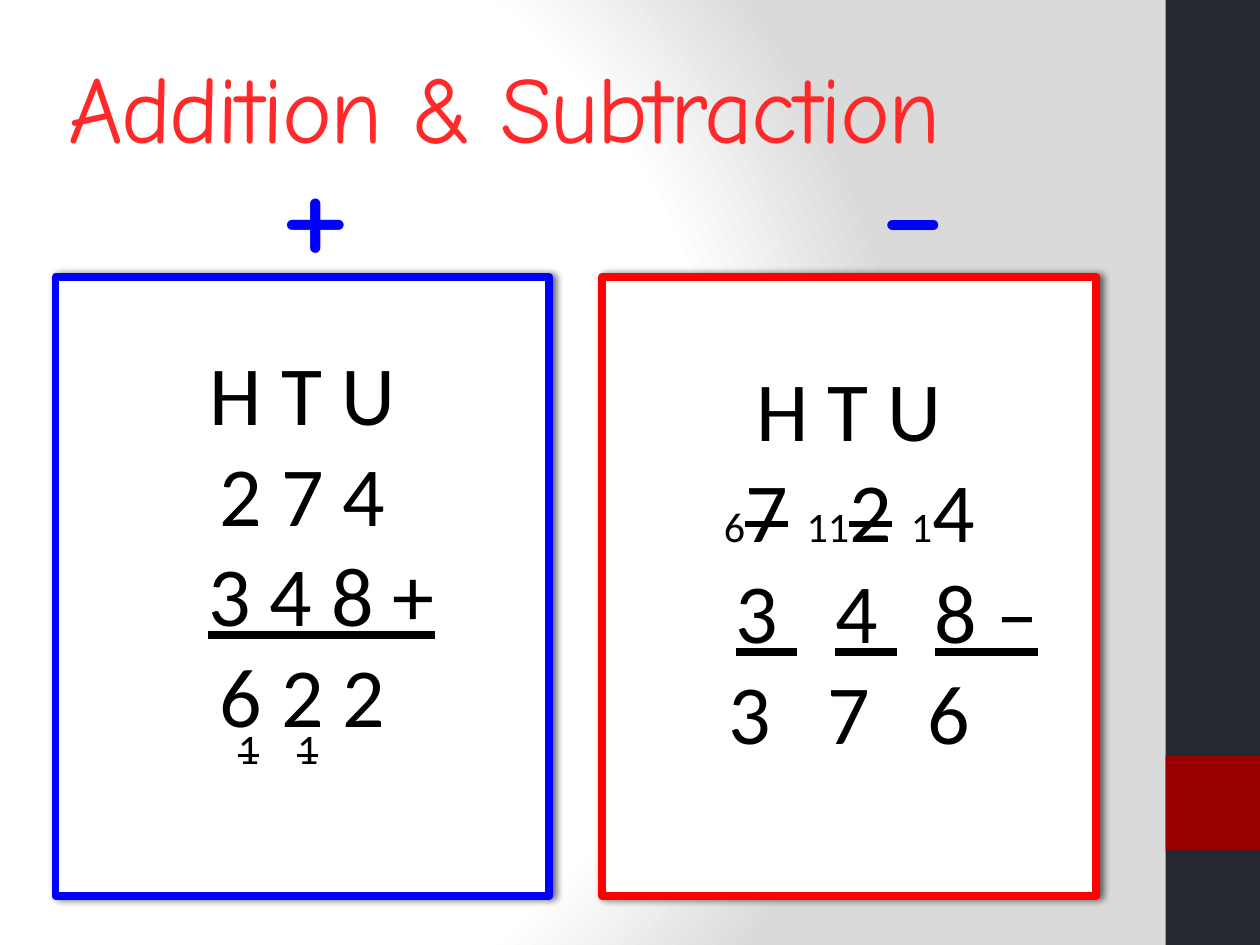
from pptx import Presentation, oxml
from pptx.dml import color
from pptx.enum import shapes, text
from pptx.util import Inches, Pt

NS = ('xmlns:a="http://schemas.openxmlformats.org/drawingml/2006/main" '
      'xmlns:p="http://schemas.openxmlformats.org/presentationml/2006/main"')
BLUE, RED, BLACK, WHITE = "0000FF", "FF0000", "000000", "FFFFFF"
BIG, SMALL = 48, 24
PANEL_TOP, PANEL_W, PANEL_H = 2.2, 3.92, 4.91


def rgb(value):
    return color.RGBColor.from_string(value)


def set_background(s):
    stops = "".join(f'<a:gs pos="{pos}"><a:srgbClr val="{c}"/></a:gs>'
                    for pos, c in ((0, WHITE), (75000, WHITE), (100000, "DADADA")))
    s.element.cSld.insert(0, oxml.parse_xml(
        f'<p:bg {NS}><p:bgPr><a:gradFill><a:gsLst>{stops}</a:gsLst>'
        '<a:path path="circle"><a:fillToRect l="20000" t="50000" r="100000" b="50000"/></a:path>'
        '</a:gradFill><a:effectLst/></p:bgPr></p:bg>'))


def add_rect(s, box, fill):
    sp = s.shapes.add_shape(shapes.MSO_SHAPE.RECTANGLE, *map(Inches, box))
    sp.shadow.inherit = False
    sp.fill.solid()
    sp.fill.fore_color.rgb = rgb(fill)
    sp.line.fill.background()
    return sp


def add_panel(s, left, line):
    sp = add_rect(s, (left, PANEL_TOP, PANEL_W, PANEL_H), WHITE)
    sp.line.color.rgb = rgb(line)
    sp.line.width = Pt(4.5)
    sp.line._get_or_add_ln().append(oxml.parse_xml(f'<a:round {NS}/>'))
    effects = sp.element.spPr.find(oxml.ns.qn("a:effectLst"))
    effects.append(oxml.parse_xml(
        f'<a:outerShdw {NS} blurRad="{Pt(4)}" dist="{Pt(2)}" dir="0">'
        f'<a:srgbClr val="{BLACK}"><a:alpha val="60000"/></a:srgbClr></a:outerShdw>'))


def style(p, name, size, c):
    p.font.name = name
    p.font.size = Pt(size)
    p.font.color.rgb = rgb(c)


def set_title(s, words):
    sp = s.shapes.title
    sp.left, sp.top, sp.width, sp.height = map(Inches, (0.44, 0.25, 8.25, 1.09))
    tf = sp.text_frame
    tf.vertical_anchor = text.MSO_ANCHOR.BOTTOM
    p = tf.paragraphs[0]
    p.alignment = text.PP_ALIGN.LEFT
    style(p, "Comic Neue", 54, "FF2929")
    r = p.add_run()
    r.text = words
    r.font._element.set("spc", "-100")


def add_textbox(s, box):
    tf = s.shapes.add_textbox(*map(Inches, box)).text_frame
    tf.word_wrap = True
    return tf


def add_sign(s, left, sign):
    p = add_textbox(s, (left, 0.73, 1.21, 1.47)).paragraphs[0]
    p.text = sign
    p.space_before = Pt(19)
    style(p, "Comic Neue", 96, BLUE)


def add_runs(p, runs):
    for words, fmt in runs:
        r = p.add_run()
        r.text = words
        if "size" in fmt:
            r.font.size = Pt(fmt["size"])
        if fmt.get("underline"):
            r.font.underline = True
        if fmt.get("strike"):
            r.font._element.set("strike", "sngStrike")
        if "gap" in fmt:
            r.font._element.set("spc", str(round(fmt["gap"] * 100)))


def spread(digits, gap, **fmt):
    runs = []
    for i, digit in enumerate(digits):
        if i:
            runs.append((" ", {**fmt, "strike": False, "gap": gap}))
        runs.append((digit, fmt))
    return runs


def add_sum(s, left, top, rows):
    tf = add_textbox(s, (left, top, PANEL_W, 3.8))
    for i, (runs, indent) in enumerate(rows):
        p = tf.add_paragraph() if i else tf.paragraphs[0]
        p.alignment = text.PP_ALIGN.CENTER
        style(p, "Calibri", BIG, BLACK)
        p._p.get_or_add_pPr().set("marL", str(Inches(indent)))
        add_runs(p, runs)
    return tf


def add_carries(tf, digits):
    p = tf.add_paragraph()
    p.line_spacing = 0.5
    style(p, "Calibri", SMALL, BLACK)
    p._p.get_or_add_pPr().set("marL", str(Inches(1.35)))
    add_runs(p, spread(digits, 16.3, strike=True))


def main():
    prs = Presentation()
    prs.slide_width, prs.slide_height = Inches(10), Inches(7.5)
    s = prs.slides.add_slide(prs.slide_layouts[5])
    set_background(s)
    add_rect(s, (9.25, 0, 0.75, 7.5), "252731")
    add_rect(s, (9.25, 6, 0.75, 0.75), "990000")
    set_title(s, "Addition & Subtraction")

    add_sign(s, 2.11, "+")
    add_sign(s, 6.88, "-")
    add_panel(s, 0.44, BLUE)
    add_panel(s, 4.78, RED)

    heading = ([("H T U", {})], 0)
    tf = add_sum(s, 0.44, 2.66, [
        heading,
        ([("2 7 4", {})], 0),
        ([("3 4 8 +", {"underline": True})], 0.3),
        ([("6 2 2", {})], 0),
    ])
    add_carries(tf, "11")

    small, struck = {"size": SMALL}, {"strike": True}
    wide = 21.7
    add_sum(s, 4.78, 2.79, [
        heading,
        ([("6", small), ("7", struck), (" ", {}), ("11", small), ("2", struck),
          (" ", {}), ("1", small), ("4", {})], 0),
        (spread("348", wide, underline=True) + [(" –", {"underline": True})], 0.6),
        (spread("376", wide), 0),
    ])
    prs.save("out.pptx")


if __name__ == "__main__":
    main()
